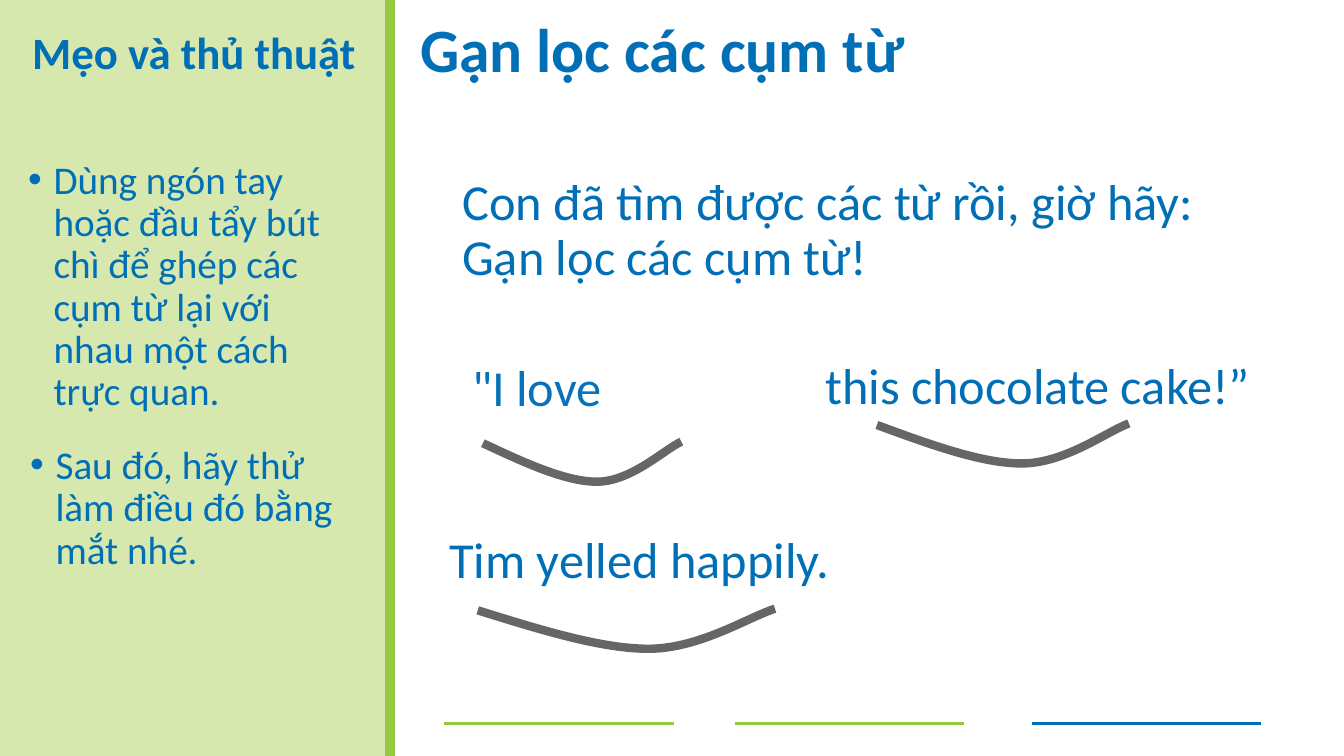
"""Build a reading-tips slide on scooping words into phrases."""
from dataclasses import dataclass

from pptx import Presentation
from pptx.dml.color import RGBColor
from pptx.enum.shapes import MSO_CONNECTOR, MSO_SHAPE
from pptx.enum.text import MSO_ANCHOR, MSO_AUTO_SIZE, PP_ALIGN
from pptx.oxml.ns import qn
from pptx.oxml.xmlchemy import OxmlElement
from pptx.util import Cm, Pt

STRAIGHT = MSO_CONNECTOR.STRAIGHT
RECT = MSO_SHAPE.RECTANGLE
TOP = MSO_ANCHOR.TOP
FIXED = MSO_AUTO_SIZE.NONE
LEFT, MID = PP_ALIGN.LEFT, PP_ALIGN.CENTER


@dataclass(frozen=True)
class Theme:
    """Colours, font and type sizes."""
    font: str = "Calibri"
    ink: str = "006FB6"
    quote: str = "0771BA"
    panel: str = "D7E8AF"
    green: str = "96C93F"
    bow: str = "666666"
    title: int = 44
    head: int = 32
    tip: int = 28
    main: int = 36


LOOK = Theme()
WIDE, HIGH, SIDE = 33.87, 19.05, 9.83

TITLE = "Gạn lọc các cụm từ"
HEAD = "Mẹo và thủ thuật"
TIPS = [
    ("Dùng ngón tay hoặc đầu tẩy bút chì để ghép các cụm từ "
     "lại với nhau một cách trực quan.", 0.46, 3.91),
    ("Sau đó, hãy thử làm điều đó bằng mắt nhé.", 0.51, 11.1),
]
LINES = [
    ("Con đã tìm được các từ rồi, giờ hãy: Gạn lọc các cụm từ!",
     11.4, 4.34, 20.96),
    ("Tim yelled happily.", 11.07, 13.36, 10.46),
    ("this chocolate cake!”", 20.55, 8.97, 13.03),
]
QUOTE = ("\"I love", 11.02, 9.02, 9.53)
BOWS = [(12.17, 11.13, 5.0), (22.1, 10.67, 6.35), (12.04, 15.34, 7.49)]
CURVE = [(0, 0.04), (0.21, 0.52), (0.42, 1), (0.58, 0.99),
         (0.75, 0.97), (0.91, 0.21), (1, 0)]
RULES = [(11.2, LOOK.green), (18.52, LOOK.green), (26.01, LOOK.ink)]
RULE_TOP, RULE_WIDE, LINE_HIGH, BOW_HIGH = 18.24, 5.78, 2.49, 1.02


def write(frame, text, size, color=LOOK.ink, bold=False, align=LEFT,
          inset=(0.25, 0.13), indent=(0, 0), dot=False):
    """Fill a text frame with one styled paragraph."""
    frame.word_wrap = True
    frame.auto_size = FIXED
    frame.vertical_anchor = TOP
    frame.margin_left, frame.margin_top = map(Cm, inset)
    frame.margin_right, frame.margin_bottom = Cm(0.25), Cm(0.13)
    para = frame.paragraphs[0]
    para.alignment = align
    para.line_spacing = 0.9
    para.space_before = Pt(0)
    props = para._p.get_or_add_pPr()
    props.set("marL", str(Cm(indent[0])))
    props.set("indent", str(Cm(indent[1])))
    if dot:
        face = OxmlElement("a:buFont")
        face.set("typeface", "Arial")
        mark = OxmlElement("a:buChar")
        mark.set("char", "•")
        props.extend([face, mark])
    run = para.add_run()
    run.text = text
    run.font.name = LOOK.font
    run.font.size = Pt(size)
    run.font.bold = bold
    run.font.color.rgb = RGBColor.from_string(color)


def add_text(slide, box, text, size, **style):
    """Add a text box at a place given in centimetres."""
    shape = slide.shapes.add_textbox(*map(Cm, box))
    write(shape.text_frame, text, size, **style)


def add_line(slide, start, end, color, width):
    """Add a straight line without a shadow."""
    line = slide.shapes.add_connector(STRAIGHT, *map(Cm, start + end))
    line.line.color.rgb = RGBColor.from_string(color)
    line.line.width = Pt(width)
    line._element.spPr.append(OxmlElement("a:effectLst"))


def add_bow(slide, left, top, wide):
    """Add a scoop made of two joined Bézier curves."""
    spots = [(Cm(left + x * wide), Cm(top + y * BOW_HIGH)) for x, y in CURVE]
    pen = slide.shapes.build_freeform(*spots[0])
    pen.add_line_segments(spots[1:], close=False)
    bow = pen.convert_to_shape()
    bow.shadow.inherit = False
    bow.fill.background()
    bow.line.color.rgb = RGBColor.from_string(LOOK.bow)
    bow.line.width = Pt(6)
    steps = list(bow._element.iter(qn("a:lnTo")))
    for first in range(0, len(steps), 3):
        trio = steps[first:first + 3]
        bend = OxmlElement("a:cubicBezTo")
        trio[0].addprevious(bend)
        for step in trio:
            bend.append(step[0])
            step.getparent().remove(step)


def main():
    """Lay out the slide and save it."""
    deck = Presentation()
    deck.slide_width, deck.slide_height = Cm(WIDE), Cm(HIGH)
    slide = deck.slides.add_slide(deck.slide_layouts[5])

    panel = slide.shapes.add_shape(RECT, 0, 0, Cm(SIDE), Cm(HIGH))
    panel.shadow.inherit = False
    panel.fill.solid()
    panel.fill.fore_color.rgb = RGBColor.from_string(LOOK.panel)
    panel.line.fill.background()
    add_line(slide, (SIDE, 0), (SIDE, HIGH), LOOK.green, 7)
    for left, color in RULES:
        add_line(slide, (left, RULE_TOP), (left + RULE_WIDE, RULE_TOP),
                 color, 2)

    title = slide.shapes.title
    title.left, title.top = Cm(SIDE), Cm(0)
    title.width, title.height = Cm(15.8), Cm(4.37)
    write(title.text_frame, TITLE, LOOK.title, bold=True, inset=(0.76, 0.48))

    add_text(slide, (0.46, 0.64, 8.86, 2.41), HEAD, LOOK.head,
             bold=True, align=MID)
    for text, left, top in TIPS:
        add_text(slide, (left, top, 8.81, 6.27), text, LOOK.tip,
                 indent=(0.64, -0.64), dot=True)
    for text, *spot in LINES:
        add_text(slide, (*spot, LINE_HIGH), text, LOOK.main)
    for bow in BOWS:
        add_bow(slide, *bow)
    text, *spot = QUOTE
    add_text(slide, (*spot, LINE_HIGH), text, LOOK.main,
             color=LOOK.quote, indent=(0.66, -0.03))
    deck.save("out.pptx")


if __name__ == "__main__":
    main()
